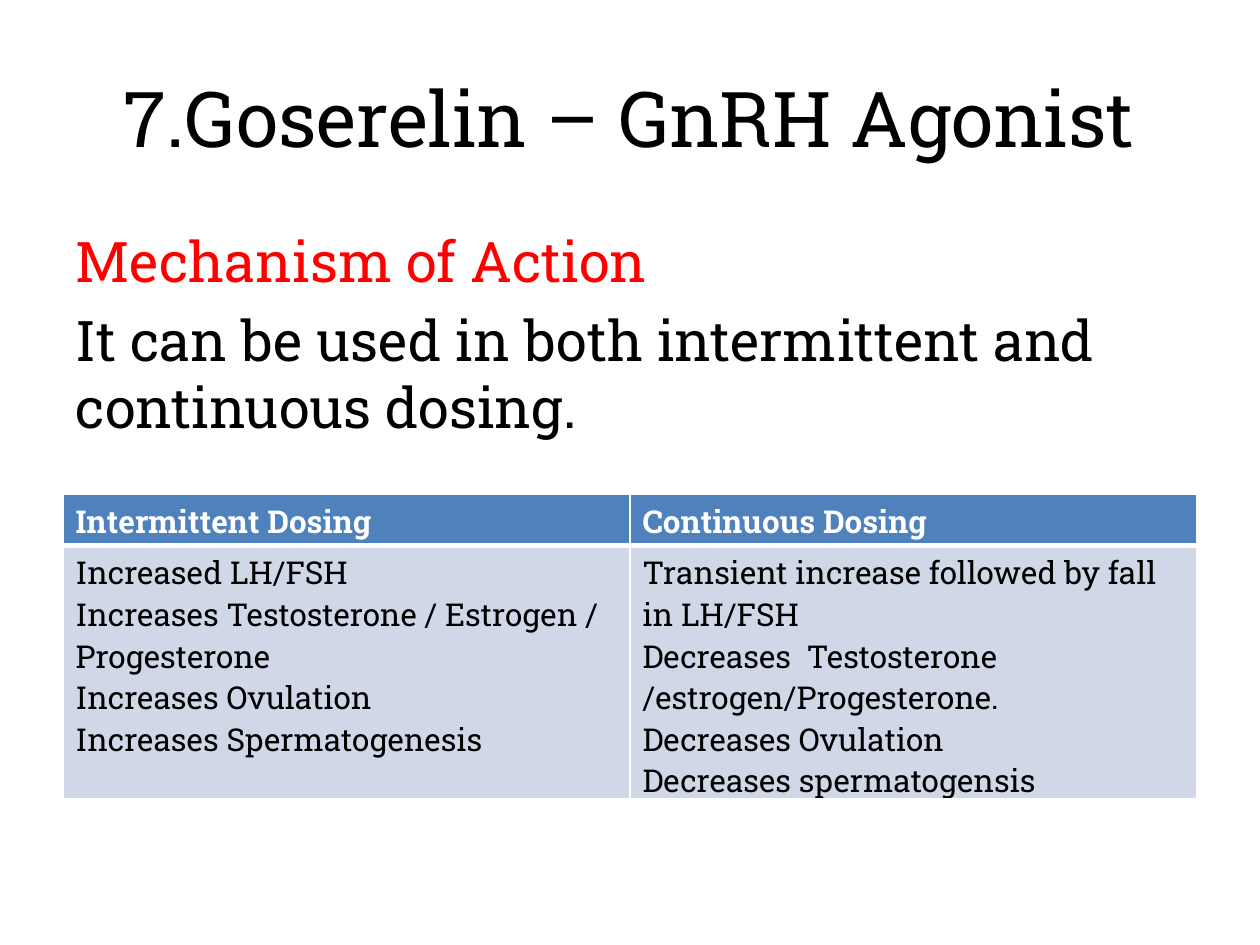
from dataclasses import dataclass

from lxml.etree import SubElement
from pptx import Presentation
from pptx.dml.color import RGBColor
from pptx.enum.text import MSO_ANCHOR, PP_ALIGN
from pptx.oxml.ns import qn
from pptx.util import Inches, Pt

BLACK = RGBColor(0x00, 0x00, 0x00)
WHITE = RGBColor(0xFF, 0xFF, 0xFF)
RED = RGBColor(0xFF, 0x00, 0x00)
HEADER_BLUE = RGBColor(0x4F, 0x81, 0xBD)
BODY_BLUE = RGBColor(0xD0, 0xD8, 0xE8)

FONT = "Roboto Slab"
WIDTH, HEIGHT = Inches(10), Inches(7.5)
MARGIN = Inches(0.5)
CONTENT_WIDTH = WIDTH - 2 * MARGIN
HEADER_HEIGHT, BODY_HEIGHT = Inches(0.41), Inches(2.01)
THIN, THICK = Pt(1), Pt(3)


@dataclass(frozen=True)
class Line:
    text: str
    size: int
    color: RGBColor = BLACK
    bold: bool = False
    align: PP_ALIGN = PP_ALIGN.LEFT
    space_before: float = 0


@dataclass(frozen=True)
class Dosing:
    heading: str
    effects: tuple[str, ...]


DOSINGS = (
    Dosing("Intermittent Dosing", (
        "Increased LH/FSH",
        "Increases Testosterone / Estrogen / Progesterone",
        "Increases Ovulation",
        "Increases Spermatogenesis",
    )),
    Dosing("Continuous Dosing", (
        "Transient increase followed by fall in LH/FSH",
        "Decreases  Testosterone /estrogen/Progesterone.",
        "Decreases Ovulation",
        "Decreases spermatogensis",
    )),
)


def write_lines(tf, lines: list[Line]) -> None:
    for i, line in enumerate(lines):
        p = tf.add_paragraph() if i else tf.paragraphs[0]
        p.text = line.text
        p.alignment = line.align
        p.space_before = Pt(line.space_before)
        p.font.name = FONT
        p.font.size = Pt(line.size)
        p.font.bold = line.bold
        p.font.color.rgb = line.color


def add_text(slide, top: int, height: int, lines: list[Line], anchor: MSO_ANCHOR) -> None:
    tf = slide.shapes.add_textbox(MARGIN, top, CONTENT_WIDTH, height).text_frame
    tf.word_wrap = True
    tf.vertical_anchor = anchor
    write_lines(tf, lines)


def set_borders(cell, top: int, bottom: int) -> None:
    """Give the cell white borders; must run before the fill, which follows them in the XML."""
    tc_pr = cell._tc.get_or_add_tcPr()
    widths = {"a:lnL": THIN, "a:lnR": THIN, "a:lnT": top, "a:lnB": bottom}
    for tag, width in widths.items():
        ln = SubElement(tc_pr, qn(tag), w=str(width))
        fill = SubElement(ln, qn("a:solidFill"))
        SubElement(fill, qn("a:srgbClr"), val=str(WHITE))


def fill_cell(cell, lines: list[Line], color: RGBColor, top: int, bottom: int) -> None:
    set_borders(cell, top, bottom)
    cell.fill.solid()
    cell.fill.fore_color.rgb = color
    write_lines(cell.text_frame, lines)


def add_dosing_table(slide, top: int) -> None:
    table = slide.shapes.add_table(
        2, len(DOSINGS), MARGIN, top, CONTENT_WIDTH, HEADER_HEIGHT + BODY_HEIGHT
    ).table
    table.rows[0].height, table.rows[1].height = HEADER_HEIGHT, BODY_HEIGHT
    for col, dosing in enumerate(DOSINGS):
        heading = [Line(dosing.heading, 18, WHITE, bold=True)]
        effects = [Line(effect, 18) for effect in dosing.effects]
        fill_cell(table.cell(0, col), heading, HEADER_BLUE, THIN, THICK)
        fill_cell(table.cell(1, col), effects, BODY_BLUE, THICK, THIN)


def main() -> None:
    prs = Presentation()
    prs.slide_width, prs.slide_height = WIDTH, HEIGHT
    slide = prs.slides.add_slide(prs.slide_layouts[6])
    add_text(slide, Inches(0.3), Inches(1.25), [
        Line("7.Goserelin – GnRH Agonist", 44, align=PP_ALIGN.CENTER),
    ], MSO_ANCHOR.MIDDLE)
    add_text(slide, Inches(1.75), Inches(4.95), [
        Line("Mechanism of Action", 32, RED, space_before=6.4),
        Line("It can be used in both intermittent and continuous dosing.", 32, space_before=6.4),
    ], MSO_ANCHOR.TOP)
    add_dosing_table(slide, Inches(3.92))
    prs.save("out.pptx")


if __name__ == "__main__":
    main()
